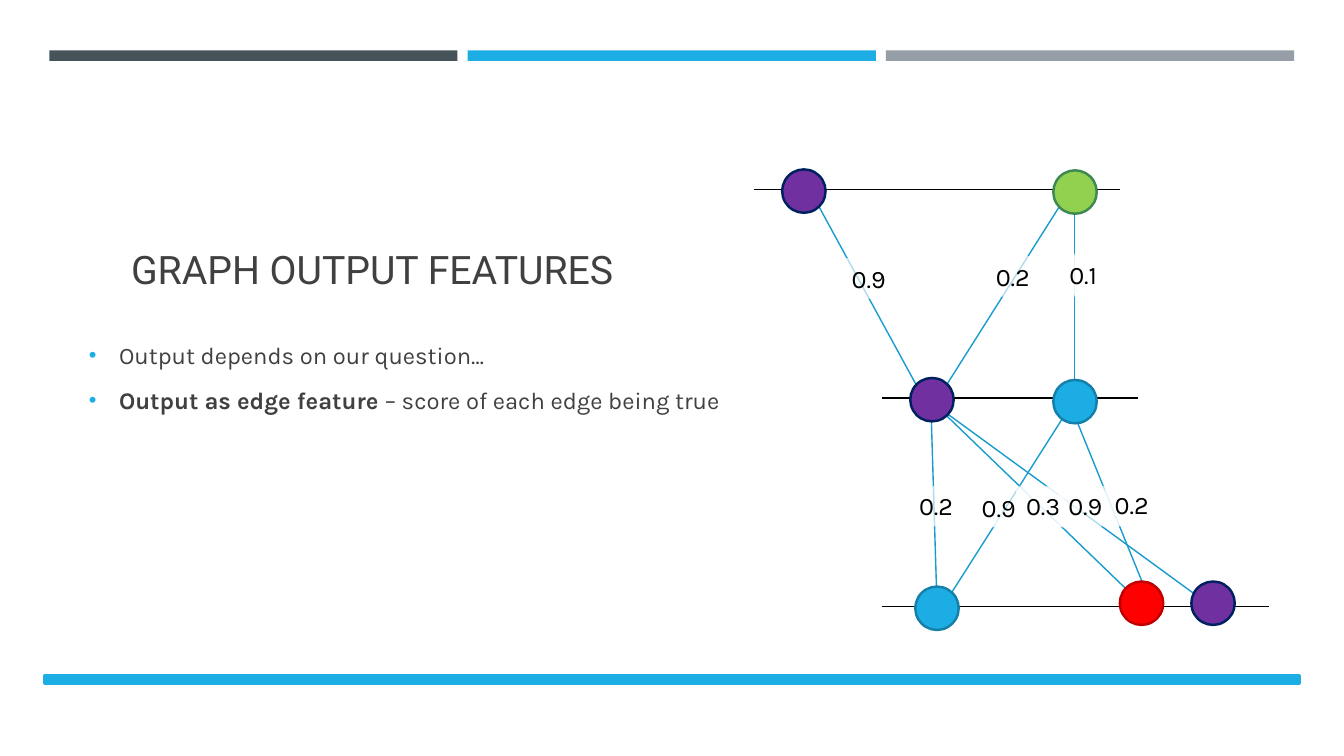
from lxml.etree import SubElement
from pptx import Presentation
from pptx.dml.color import RGBColor
from pptx.enum.shapes import MSO_CONNECTOR, MSO_SHAPE
from pptx.enum.text import MSO_ANCHOR, MSO_AUTO_SIZE, PP_ALIGN
from pptx.oxml.ns import qn
from pptx.util import Pt

COLORS = {
    "text": "404040", "black": "000000", "white": "FFFFFF",
    "slate": "465359", "blue": "1CADE4", "gray": "969FA7",
    "edge": "189CCE", "blue rim": "1580A9",
    "red": "FF0000", "red rim": "C00000",
    "green": "92D050", "green rim": "3E8853",
    "purple": "7030A0", "purple rim": "002060",
}
NODE_SIZE = 31
LABEL_HEIGHT = 29

# Left end, right end, height
LEVELS = [(538.6, 799.9, 135.4), (630, 812.9, 284.4), (630, 906.5, 433.4)]
# Start x, y, end x, y
EDGES = [
    (668.9, 419, 665.3, 301),
    (654.5, 275, 584.6, 146.9),
    (676.1, 275, 756.7, 147.6),
    (767.5, 271.4, 767.5, 152.6),
    (679.7, 423.4, 768.2, 284.4),
    (826.6, 442.1, 767.5, 296.6),
    (826.6, 442.1, 662.4, 283.7),
    (877.7, 442.1, 665.3, 287.3),
]
# Left, top, color
NODES = [
    (653.8, 419, "blue"), (752.4, 271.4, "blue"),
    (799.9, 415.4, "red"), (752.4, 121.7, "green"),
    (851, 415.4, "purple"), (650.2, 270, "purple"), (558.7, 121, "purple"),
]
# Left, top, width, score
SCORES = [
    (601.2, 184.3, 66.2, "0.9"), (704.2, 182.9, 66.2, "0.2"),
    (756.7, 181.4, 66.2, "0.1"), (649.4, 347, 66.2, "0.2"),
    (694.1, 347.8, 66.2, "0.9"), (725.8, 347, 47.5, "0.3"),
    (756, 347, 47.5, "0.9"), (789.1, 346.3, 66.2, "0.2"),
]


class GraphSlide:
    def __init__(self, presentation):
        self.slide = presentation.slides.add_slide(presentation.slide_layouts[1])
        self.shapes = self.slide.shapes

    def color(self, name):
        return RGBColor.from_string(COLORS[name])

    def style_font(self, paragraph, name, size, color):
        paragraph.font.name = name
        paragraph.font.size = Pt(size)
        paragraph.font.color.rgb = self.color(color)

    def place(self, shape, left, top, width, height):
        shape.left, shape.top = Pt(left), Pt(top)
        shape.width, shape.height = Pt(width), Pt(height)

    def title(self, text, *box):
        shape = self.shapes.title
        self.place(shape, *box)
        frame = shape.text_frame
        frame.text = text
        frame.auto_size = MSO_AUTO_SIZE.NONE
        frame.vertical_anchor = MSO_ANCHOR.BOTTOM
        paragraph = frame.paragraphs[0]
        paragraph.alignment = PP_ALIGN.LEFT
        self.style_font(paragraph, "Roboto", 28, "text")

    def bullets(self, items, *box):
        """Fill the body with items, each a list of (text, bold) runs."""
        shape = self.slide.placeholders[1]
        self.place(shape, *box)
        frame = shape.text_frame
        frame.auto_size = MSO_AUTO_SIZE.NONE
        frame.vertical_anchor = MSO_ANCHOR.TOP
        frame.margin_top = Pt(45)
        for index, runs in enumerate(items):
            paragraph = frame.add_paragraph() if index else frame.paragraphs[0]
            self.bullet(paragraph)
            paragraph.line_spacing = 1.1
            paragraph.space_before = Pt(3.4 if index else 0)
            paragraph.space_after = Pt(6)
            self.style_font(paragraph, "Karla", 17, "text")
            for text, bold in runs:
                run = paragraph.add_run()
                run.text = text
                run.font.bold = bold

    def bullet(self, paragraph):
        properties = paragraph._p.get_or_add_pPr()
        properties.set("marL", str(Pt(21.6)))
        properties.set("indent", str(Pt(-21.6)))
        bullet_color = SubElement(properties, qn("a:buClr"))
        SubElement(bullet_color, qn("a:srgbClr"), val=COLORS["blue"])
        SubElement(properties, qn("a:buSzPct"), val="92000")
        SubElement(properties, qn("a:buFont"), typeface="Arial")
        SubElement(properties, qn("a:buChar"), char="•")

    def shape(self, kind, fill, *box, rim=None):
        shape = self.shapes.add_shape(kind, *map(Pt, box))
        shape.shadow.inherit = False
        shape.fill.solid()
        shape.fill.fore_color.rgb = self.color(fill)
        if rim:
            shape.line.color.rgb = self.color(rim)
            shape.line.width = Pt(1.75)
        else:
            shape.line.fill.background()
        return shape

    def bar(self, color, *box, rim=None):
        self.shape(MSO_SHAPE.RECTANGLE, color, *box, rim=rim)

    def node(self, left, top, color):
        self.shape(MSO_SHAPE.OVAL, color, left, top, NODE_SIZE, NODE_SIZE,
                   rim=f"{color} rim")

    def line(self, color, *ends):
        connector = self.shapes.add_connector(MSO_CONNECTOR.STRAIGHT, *map(Pt, ends))
        connector.line.color.rgb = self.color(color)
        connector.line.width = Pt(1)
        SubElement(connector._element.spPr, qn("a:effectLst"))

    def score(self, left, top, width, text):
        """Add an edge score on a translucent white ground."""
        shape = self.shape(MSO_SHAPE.RECTANGLE, "white", left, top, width, LABEL_HEIGHT)
        fill_color = shape._element.spPr.find(qn("a:solidFill"))[0]
        SubElement(fill_color, qn("a:alpha"), val="65000")
        frame = shape.text_frame
        frame.word_wrap = True
        frame.auto_size = MSO_AUTO_SIZE.SHAPE_TO_FIT_TEXT
        frame.vertical_anchor = MSO_ANCHOR.TOP
        frame.text = text
        paragraph = frame.paragraphs[0]
        paragraph.alignment = PP_ALIGN.LEFT
        self.style_font(paragraph, "Karla", 18, "black")


def main():
    presentation = Presentation()
    presentation.slide_width, presentation.slide_height = Pt(960), Pt(540)
    graph = GraphSlide(presentation)

    for column, color in enumerate(["slate", "blue", "gray"]):
        graph.bar(color, 35.2 + 298.8 * column, 36, 291.6, 7.5)
    graph.bar("blue", 31.7, 482.4, 896.4, 5.8, rim="blue")

    graph.title("GRAPH OUTPUT FEATURES", 86.4, 54, 828, 158.4)
    graph.bullets([
        [("Output depends on our question…", False)],
        [("Output as edge feature ", True),
         ("– score of each edge being true", False)],
    ], 56.2, 196.6, 470.2, 211)

    for edge in EDGES:
        graph.line("edge", *edge)
    for left, right, height in LEVELS:
        graph.line("black", left, height, right, height)
    for node in NODES:
        graph.node(*node)
    for score in SCORES:
        graph.score(*score)

    presentation.save("out.pptx")


if __name__ == "__main__":
    main()
